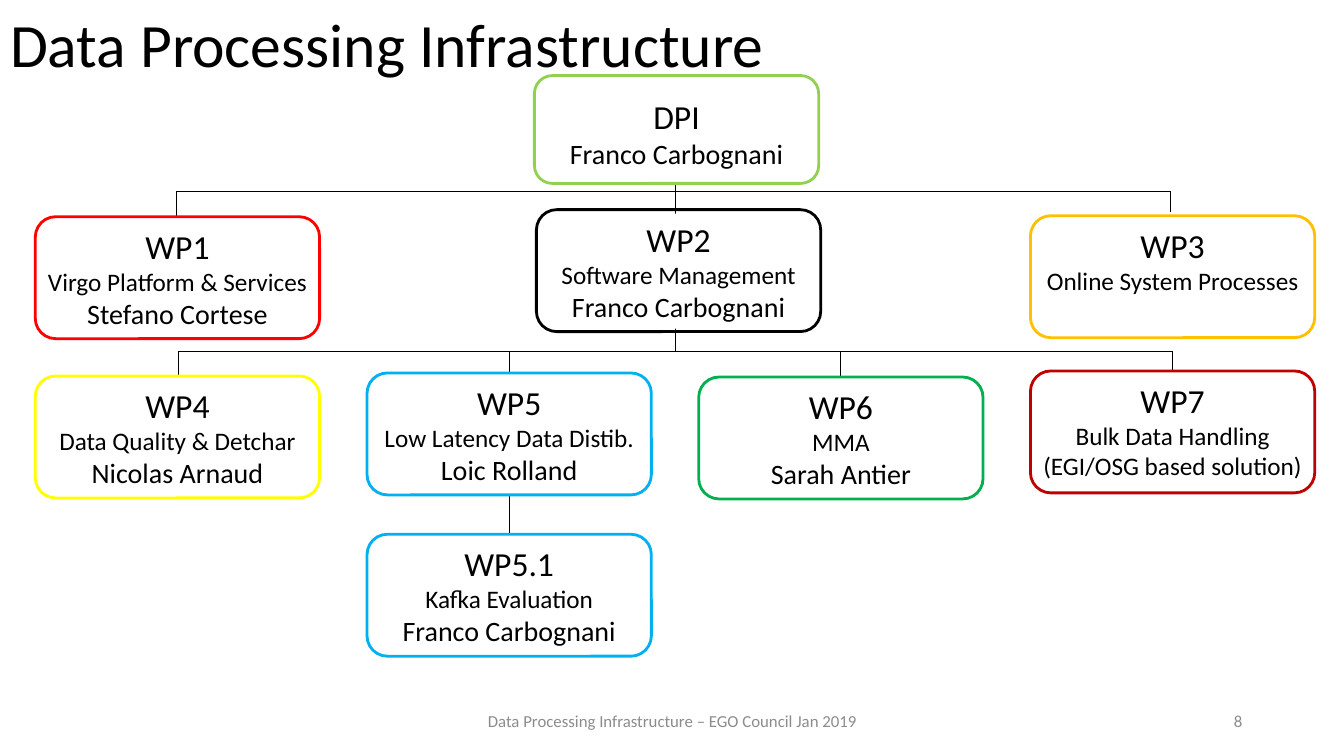
from dataclasses import dataclass
from lxml.etree import SubElement
from pptx import Presentation
from pptx.dml.color import RGBColor as RGB
from pptx.enum.shapes import MSO_CONNECTOR as Link, MSO_SHAPE as Shape
from pptx.enum.text import MSO_ANCHOR as Anchor, MSO_AUTO_SIZE as Fit, PP_ALIGN as Align
from pptx.oxml.ns import qn
from pptx.util import Inches, Pt


@dataclass(frozen=True)
class Theme:
    font: str = "Calibri"
    ink: str = "000000"
    paper: str = "FFFFFF"
    muted: str = "8C8C8C"
    green: str = "92D050"
    red: str = "FF0000"
    gold: str = "FFC000"
    yellow: str = "FFFF00"
    blue: str = "00B0F0"
    leaf: str = "00B050"
    wine: str = "C00000"
    title: int = 44
    head: int = 24
    name: int = 20
    task: int = 18
    note: int = 12
    frame: float = 2
    rule: float = 0.5


THEME = Theme()
WIDE, HIGH = 2.82, 1.21
COLS = [0.35 + 3.29 * i for i in range(4)]
MID = 5.32
TOP_RAIL, LOW_RAIL = 1.9, 3.49


def style(para, size, color, align):
    para.alignment = align
    for run in para.runs:
        run.font.name = THEME.font
        run.font.size = Pt(size)
        run.font.color.rgb = RGB.from_string(color)


def add_title(slide, text):
    title = slide.shapes.title
    title.left, title.top = Inches(0), Inches(0)
    title.width, title.height = Inches(11.5), Inches(0.94)
    frame = title.text_frame
    frame.text = text
    frame.auto_size = Fit.NONE
    frame.vertical_anchor = Anchor.MIDDLE
    para = frame.paragraphs[0]
    para.line_spacing = 0.9
    style(para, THEME.title, THEME.ink, Align.LEFT)


def add_text(slide, x, y, wide, high, lines, color, align, anchor=Anchor.TOP):
    box = slide.shapes.add_textbox(Inches(x), Inches(y), Inches(wide), Inches(high))
    frame = box.text_frame
    frame.word_wrap = True
    frame.vertical_anchor = anchor
    frame.text = "\n".join(text for text, size in lines)
    for para, (text, size) in zip(frame.paragraphs, lines):
        style(para, size, color, align)
    return box


def add_card(slide, x, y, color, lines, high=HIGH, pad=0.04, solid=False):
    box = add_text(slide, x, y + pad, WIDE, high - pad - 0.03, lines, THEME.ink, Align.CENTER)
    if solid:
        box.fill.solid()
        box.fill.fore_color.rgb = RGB.from_string(THEME.paper)
    edge = slide.shapes.add_shape(
        Shape.ROUNDED_RECTANGLE, Inches(x), Inches(y), Inches(WIDE), Inches(high))
    edge.shadow.inherit = False
    edge.fill.background()
    edge.line.color.rgb = RGB.from_string(color)
    edge.line.width = Pt(THEME.frame)


def add_link(slide, x1, y1, x2, y2):
    link = slide.shapes.add_connector(
        Link.STRAIGHT, Inches(x1), Inches(y1), Inches(x2), Inches(y2))
    link.line.color.rgb = RGB.from_string(THEME.ink)
    link.line.width = Pt(THEME.rule)
    SubElement(link._element.spPr, qn("a:effectLst"))


def add_tree(slide):
    links = [
        (6.7, 1.82, 6.7, LOW_RAIL),
        (1.75, TOP_RAIL, 11.61, TOP_RAIL),
        (1.75, TOP_RAIL, 1.75, 2.15),
        (11.61, TOP_RAIL, 11.61, 2.1),
        (1.77, LOW_RAIL, 11.63, LOW_RAIL),
        (1.77, LOW_RAIL, 1.77, 3.73),
        (5.05, LOW_RAIL, 5.05, 3.7),
        (8.33, LOW_RAIL, 8.33, 3.74),
        (11.63, LOW_RAIL, 11.63, 3.68),
        (5.05, 4.91, 5.05, 5.3),
    ]
    for ends in links:
        add_link(slide, *ends)


def add_team(slide):
    t = THEME
    lead = "Franco Carbognani"
    add_card(slide, 5.3, 0.75, t.green, [("DPI", t.head), (lead, t.name)], high=1.07, pad=0.15)
    add_card(slide, MID, 2.08, t.ink, [
        ("WP2", t.head), ("Software Management", t.task), (lead, t.name)], solid=True)
    cards = [
        (COLS[0], 2.15, t.red, "WP1", "Virgo Platform & Services", "Stefano Cortese"),
        (COLS[0], 3.73, t.yellow, "WP4", "Data Quality & Detchar", "Nicolas Arnaud"),
        (COLS[1], 3.7, t.blue, "WP5", "Low Latency Data Distib.", "Loic Rolland"),
        (COLS[2], 3.74, t.leaf, "WP6", "MMA", "Sarah Antier"),
        (COLS[1], 5.3, t.blue, "WP5.1", "Kafka Evaluation", lead),
    ]
    for x, y, color, code, task, name in cards:
        add_card(slide, x, y, color, [(code, t.head), (task, t.task), (name, t.name)])
    add_card(slide, COLS[3], 2.14, t.gold, [
        ("WP3", t.head), ("Online System Processes", t.task)])
    add_card(slide, COLS[3], 3.68, t.wine, [
        ("WP7", t.head), ("Bulk Data Handling", t.task), ("(EGI/OSG based solution)", t.task)])


def add_foot(slide):
    notes = [
        (4.42, 4.5, "Data Processing Infrastructure – EGO Council Jan 2019", Align.CENTER),
        (9.42, 3, "8", Align.RIGHT),
    ]
    for x, wide, text, align in notes:
        add_text(slide, x, 6.95, wide, 0.4, [(text, THEME.note)], THEME.muted, align, Anchor.MIDDLE)


def main():
    deck = Presentation()
    deck.slide_width, deck.slide_height = Inches(13.33), Inches(7.5)
    slide = deck.slides.add_slide(deck.slide_layouts[5])
    add_title(slide, "Data Processing Infrastructure")
    add_tree(slide)
    add_team(slide)
    add_foot(slide)
    deck.save("out.pptx")


if __name__ == "__main__":
    main()
